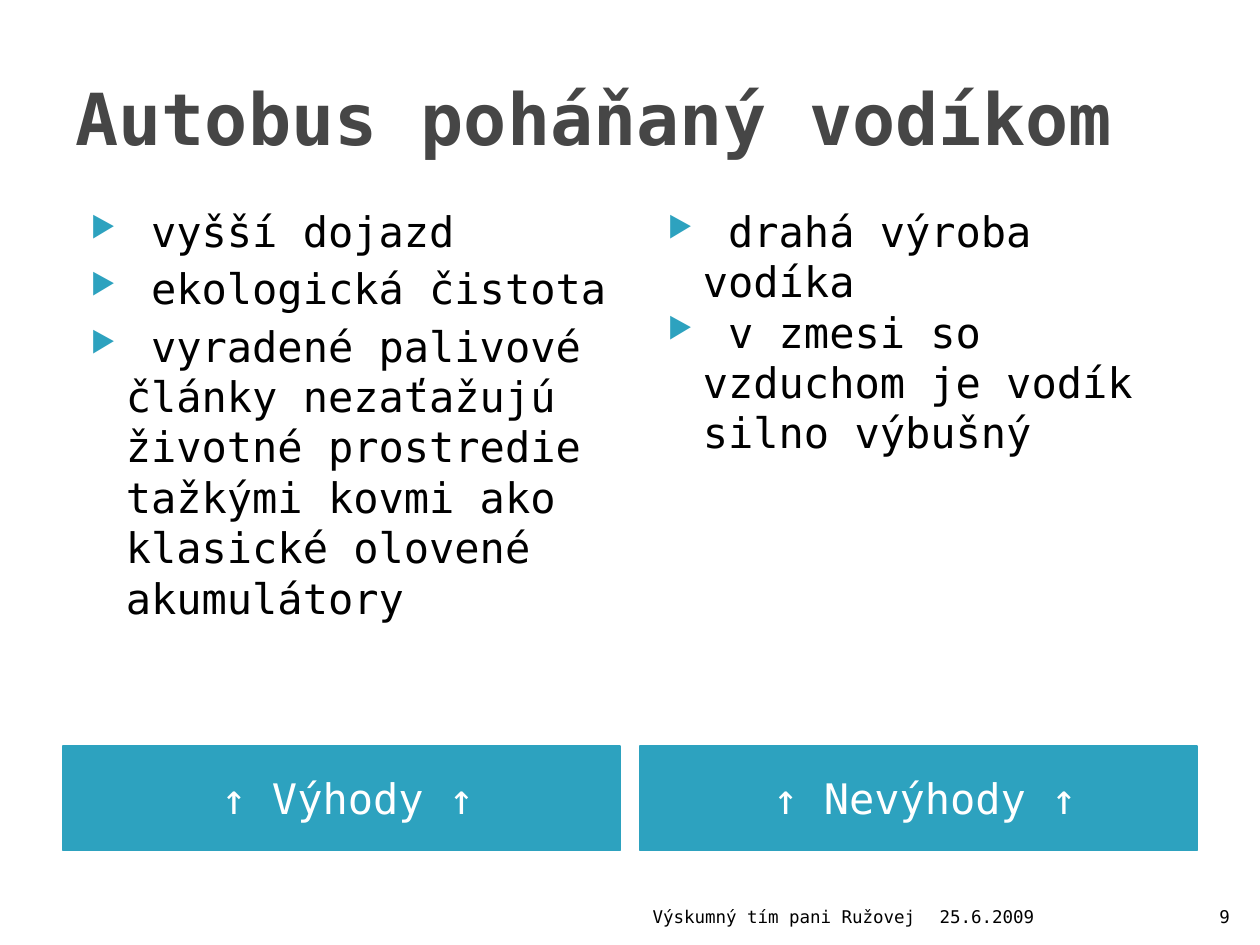
from dataclasses import dataclass

from lxml import etree
from pptx import Presentation, util as u
from pptx.dml.color import RGBColor
from pptx.enum import shapes, text
from pptx.oxml import ns

FONT = "DejaVu Sans Mono"
COLORS = {"title": "464646", "body": "000000", "accent": "2DA2BF", "label": "FFFFFF"}
ALIGN = text.PP_ALIGN
ANCHOR = text.MSO_ANCHOR
COLUMN_WIDTH = 4.42


@dataclass
class Label:
    wording: str
    left: float
    top: float
    width: float
    height: float
    size: float
    align: ALIGN = ALIGN.LEFT
    anchor: ANCHOR = ANCHOR.BOTTOM
    color: str = "body"
    bold: bool = False


@dataclass
class Column:
    left: float
    heading: str
    points: list[str]
    gap: float


LABELS = [
    Label("Autobus poháňaný vodíkom", 0.5, 0.3, 9, 1.25, 41,
          anchor=ANCHOR.MIDDLE, color="title", bold=True),
    Label("Výskumný tím pani Ružovej", 4.79, 7.01, 2.57, 0.4, 10, ALIGN.RIGHT),
    Label("25.6.2009", 7.36, 7.01, 2.1, 0.4, 10),
    Label("9", 9.46, 7.01, 0.4, 0.4, 10, ALIGN.RIGHT),
]

COLUMNS = [
    Column(0.5, "↑ Výhody ↑", [
        " vyšší dojazd",
        " ekologická čistota",
        " vyradené palivové články nezaťažujú životné prostredie "
        "tažkými kovmi ako klasické olovené akumulátory",
    ], 4),
    Column(5.08, "↑ Nevýhody ↑", [
        " drahá výroba vodíka",
        " v zmesi so vzduchom je vodík silno výbušný",
    ], 0),
]


def format_runs(paragraph, size: float, color: str, bold: bool = False) -> None:
    for run in paragraph.runs:
        run.font.name = FONT
        run.font.size = u.Pt(size)
        run.font.bold = bold
        run.font.color.rgb = RGBColor.from_string(COLORS[color])


def add_bullet(paragraph) -> None:
    properties = paragraph._p.get_or_add_pPr()
    properties.set("marL", str(u.Inches(0.4)))
    properties.set("indent", str(u.Inches(-0.28)))
    color = etree.SubElement(properties, ns.qn("a:buClr"))
    etree.SubElement(color, ns.qn("a:srgbClr"), val=COLORS["accent"])
    etree.SubElement(properties, ns.qn("a:buSzPct"), val="68000")
    etree.SubElement(properties, ns.qn("a:buChar"), char="▶")


def add_text_box(slide, left: float, top: float, width: float, height: float):
    shape = slide.shapes.add_textbox(*map(u.Inches, (left, top, width, height)))
    shape.text_frame.word_wrap = True
    return shape.text_frame


def add_label(slide, label: Label) -> None:
    frame = add_text_box(slide, label.left, label.top, label.width, label.height)
    frame.vertical_anchor = label.anchor
    frame.text = label.wording
    paragraph = frame.paragraphs[0]
    paragraph.alignment = label.align
    format_runs(paragraph, label.size, label.color, label.bold)


def add_heading_bar(slide, column: Column) -> None:
    bounds = (column.left, 5.92, COLUMN_WIDTH, 0.83)
    shape = slide.shapes.add_shape(shapes.MSO_SHAPE.RECTANGLE, *map(u.Inches, bounds))
    shape.shadow.inherit = False
    accent = RGBColor.from_string(COLORS["accent"])
    shape.fill.solid()
    shape.fill.fore_color.rgb = accent
    shape.line.color.rgb = accent
    shape.line.width = u.Pt(0.75)
    frame = shape.text_frame
    frame.word_wrap = True
    frame.margin_left = u.Inches(0.2)
    frame.vertical_anchor = ANCHOR.MIDDLE
    frame.text = column.heading
    frame.paragraphs[0].alignment = ALIGN.CENTER
    format_runs(frame.paragraphs[0], 24, "label")


def add_points(slide, column: Column) -> None:
    frame = add_text_box(slide, column.left, 1.58, COLUMN_WIDTH, 4.31)
    frame.text = "\n".join(column.points)
    for index, paragraph in enumerate(frame.paragraphs):
        add_bullet(paragraph)
        paragraph.line_spacing = u.Pt(28.8)
        paragraph.space_before = u.Pt(column.gap if index else 0)
        format_runs(paragraph, 24, "body")


def main() -> None:
    presentation = Presentation()
    presentation.slide_width = u.Inches(10)
    presentation.slide_height = u.Inches(7.5)
    slide = presentation.slides.add_slide(presentation.slide_layouts[6])

    # Title and footer
    for label in LABELS:
        add_label(slide, label)

    # Advantages and disadvantages
    for column in COLUMNS:
        add_heading_bar(slide, column)
        add_points(slide, column)

    presentation.save("out.pptx")


if __name__ == "__main__":
    main()
